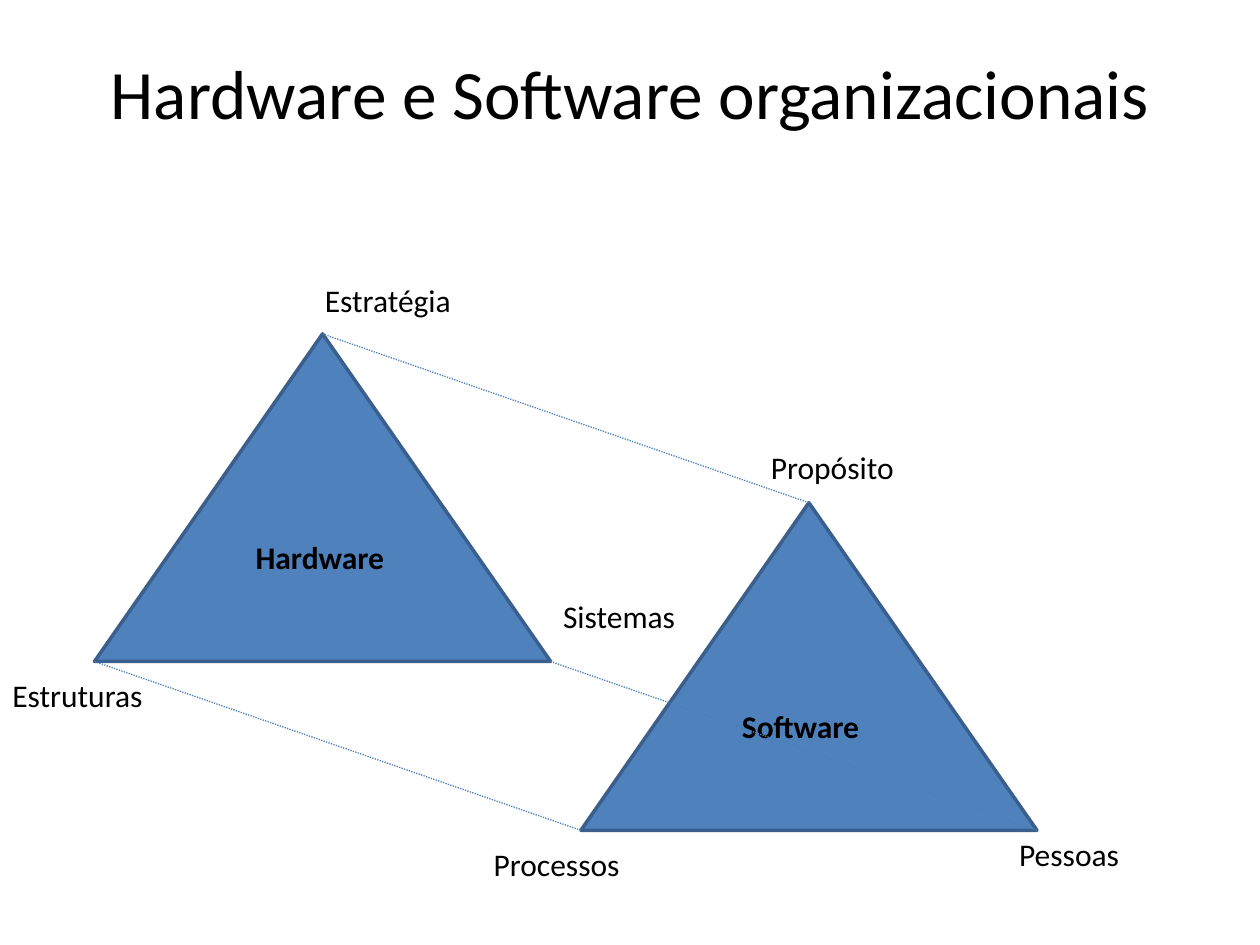
from lxml import etree
from pptx import Presentation
from pptx.dml.color import RGBColor
from pptx.enum.dml import MSO_LINE
from pptx.enum.shapes import MSO_CONNECTOR, MSO_SHAPE
from pptx.enum.text import MSO_ANCHOR, PP_ALIGN
from pptx.oxml.ns import qn
from pptx.util import Inches, Pt

TRIANGLE = MSO_SHAPE.ISOSCELES_TRIANGLE
STRAIGHT = MSO_CONNECTOR.STRAIGHT
DOTTED = MSO_LINE.ROUND_DOT  # written as sysDot
MIDDLE, TOP = MSO_ANCHOR.MIDDLE, MSO_ANCHOR.TOP
CENTER, LEFT = PP_ALIGN.CENTER, PP_ALIGN.LEFT

COLORS = {name: RGBColor.from_string(value) for name, value in {
    "text": "000000", "fill": "4F81BD", "outline": "3A5F8C", "link": "4B7EBC",
}.items()}

deck = Presentation()
deck.slide_width, deck.slide_height = Inches(10), Inches(7.5)
page = deck.slides.add_slide(deck.slide_layouts[6])

# The slide is a grid of 100 columns by 75 rows of square cells.
CELL = deck.slide_width / 100


def cells(*counts):
    return [round(count * CELL) for count in counts]


def add_label(text, left, top, width, height=4, size=18, bold=False,
              align=LEFT, anchor=TOP):
    box = page.shapes.add_textbox(*cells(left, top, width, height))
    frame = box.text_frame
    frame.word_wrap = True
    frame.vertical_anchor = anchor
    frame.text = text
    para = frame.paragraphs[0]
    para.alignment = align
    font = para.runs[0].font
    font.name, font.size, font.bold = "Calibri", Pt(size), bold
    font.color.rgb = COLORS["text"]


add_label("Hardware e Software organizacionais", 5, 3, 90, 8.5, size=39.6,
          align=CENTER, anchor=MIDDLE)

# Both triangles share one size; the second is shifted right and down.
WIDTH, HEIGHT = 36.2, 26
SHIFT_X, SHIFT_Y = 38.6, 13.4
FIRST_LEFT, FIRST_TOP = 7.5, 26.5
NAME_X, NAME_Y = 11.8, 15.7

triangles = [
    ("Hardware", 18.9, [("Estratégia", 24.8, 21.8, 13.4),
                        ("Sistemas", 43.7, 46.9, 18.1),
                        ("Estruturas", 0, 53.2, 15.7)]),
    ("Software", 15, [("Propósito", 60.2, 35.1, 27.6),
                      ("Processos", 38.2, 66.6, 17.3),
                      ("Pessoas", 79.9, 65.8, 13.4)]),
]
for index, (name, name_width, corner_labels) in enumerate(triangles):
    left = FIRST_LEFT + index * SHIFT_X
    top = FIRST_TOP + index * SHIFT_Y
    triangle = page.shapes.add_shape(TRIANGLE, *cells(left, top, WIDTH, HEIGHT))
    triangle.shadow.inherit = False
    triangle.fill.solid()
    triangle.fill.fore_color.rgb = COLORS["fill"]
    triangle.line.color.rgb = COLORS["outline"]
    triangle.line.width = Pt(2)
    add_label(name, left + NAME_X, top + NAME_Y, name_width, bold=True)
    for label in corner_labels:
        add_label(*label)

# Dotted links join the matching corners: apex, bottom left, bottom right.
for corner_x, corner_y in [(WIDTH / 2, 0), (0, HEIGHT), (WIDTH, HEIGHT)]:
    x, y = FIRST_LEFT + corner_x, FIRST_TOP + corner_y
    link = page.shapes.add_connector(
        STRAIGHT, *cells(x, y, x + SHIFT_X, y + SHIFT_Y))
    link.line.color.rgb = COLORS["link"]
    link.line.width = Pt(0.75)
    link.line.dash_style = DOTTED
    etree.SubElement(link.element.spPr, qn("a:effectLst"))

deck.save("out.pptx")
